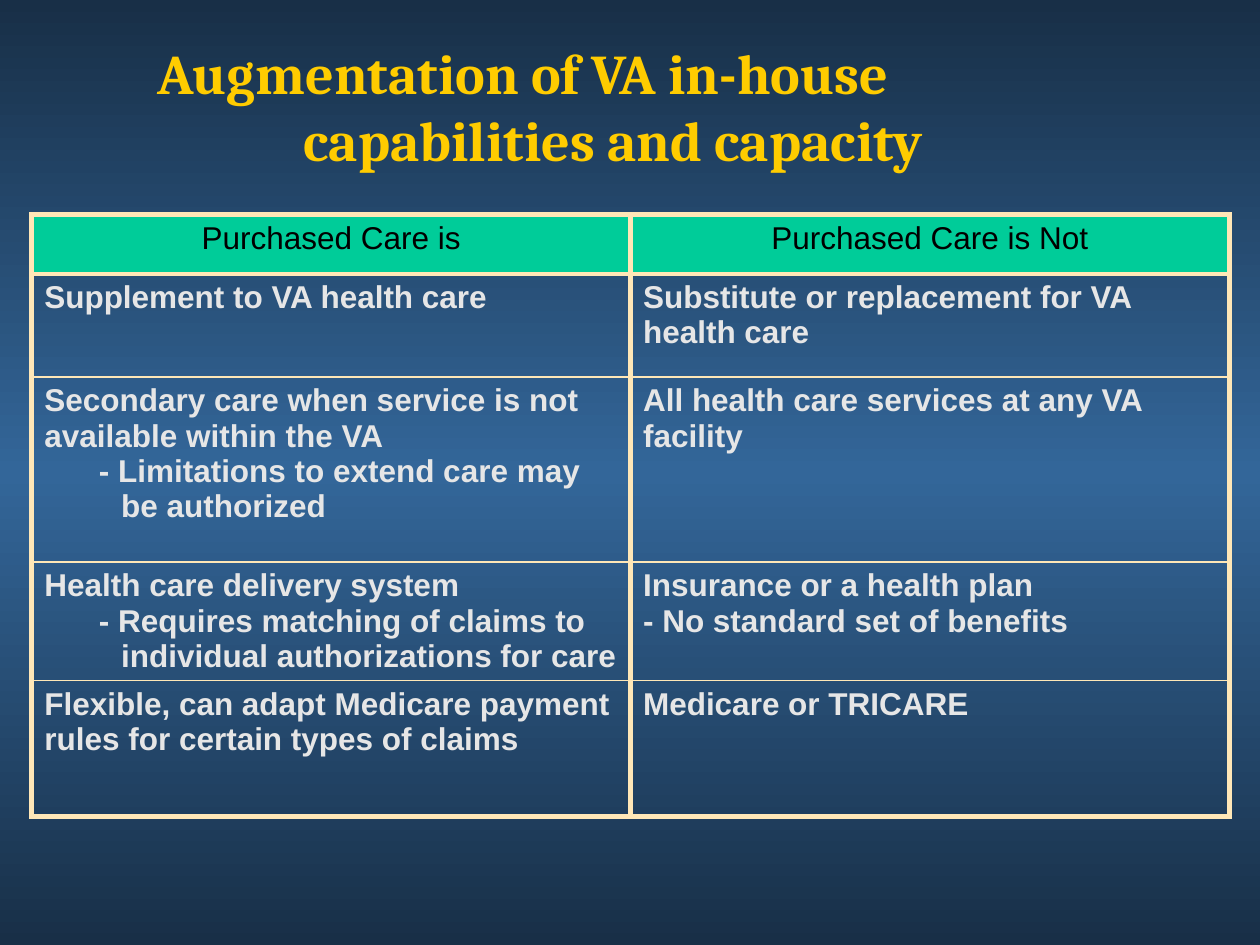
import copy

import pptx
import pptx.dml.color
import pptx.enum.text
import pptx.oxml
import pptx.oxml.ns
import pptx.util

Cm = pptx.util.Cm
Pt = pptx.util.Pt
ALIGN = pptx.enum.text.PP_ALIGN

TITLE = "Augmentation of VA in-house\vcapabilities and capacity"
HEADINGS = (["Purchased Care is"], ["Purchased Care is Not"])
ROWS = [
    HEADINGS,
    (["Supplement to VA health care"],
     ["Substitute or replacement for VA health care"]),
    (["Secondary care when service is not available within the VA",
      ("- Limitations to extend care may be authorized",)],
     ["All health care services at any VA facility"]),
    (["Health care delivery system",
      ("- Requires matching of claims to individual authorizations for care",)],
     ["Insurance or a health plan", "- No standard set of benefits"]),
    (["Flexible, can adapt Medicare payment rules for certain types of claims"],
     ["Medicare or TRICARE"]),
]
ROW_HEIGHTS = [1.19, 2.08, 3.73, 2.39, 2.74]
COLUMN_WIDTH = 12.07
THEME = {
    "background": [(0, "182F47"), (0.5, "336699"), (1, "182F47")],
    "title": "FFCC00", "title_font": "Cambria", "title_size": 32,
    "heading": "000000", "heading_fill": "00CC99",
    "body": "E6E6E6", "body_font": "Arial", "body_size": 18,
    "border": "FFE7B7", "thick": 3, "thin": 1,
}


def rgb(value):
    return pptx.dml.color.RGBColor.from_string(value)


def style(font, name, size, colour, bold):
    font.name, font.size, font.bold = name, Pt(size), bold
    font.color.rgb = rgb(colour)


def indent(para, margin, first_line):
    properties = para._p.get_or_add_pPr()
    properties.set("marL", str(Cm(margin)))
    properties.set("indent", str(Cm(first_line)))


def paint_background(slide):
    fill = slide.background.fill
    fill.gradient()
    fill.gradient_angle = 270
    stops = slide.element.find(".//" + pptx.oxml.ns.qn("a:gsLst"))
    stops.append(copy.deepcopy(stops[-1]))
    for stop, (position, colour) in zip(fill.gradient_stops, THEME["background"]):
        stop.position = position
        stop.color.rgb = rgb(colour)


def add_title(slide):
    box = slide.shapes.title
    box.left, box.top, box.width, box.height = Cm(0.64), Cm(0.64), Cm(23.5), Cm(2.97)
    frame = box.text_frame
    frame.text = TITLE
    frame.auto_size = pptx.enum.text.MSO_AUTO_SIZE.NONE
    frame.vertical_anchor = pptx.enum.text.MSO_ANCHOR.MIDDLE
    para = frame.paragraphs[0]
    para.alignment = ALIGN.LEFT
    indent(para, 5.23, -2.95)
    for span in para.runs:
        style(span.font, THEME["title_font"], THEME["title_size"], THEME["title"], True)


def set_borders(cell, top, bottom):
    widths = {"L": THEME["thick"], "R": THEME["thick"], "T": top, "B": bottom}
    properties = cell._tc.get_or_add_tcPr()
    for place, (side, width) in enumerate(widths.items()):
        properties.insert(place, pptx.oxml.parse_xml(
            f'<a:ln{side} {pptx.oxml.ns.nsdecls("a")} w="{Pt(width)}"><a:solidFill>'
            f'<a:srgbClr val="{THEME["border"]}"/></a:solidFill></a:ln{side}>'))


def fill_cell(cell, lines, is_heading):
    if is_heading:
        cell.fill.solid()
        cell.fill.fore_color.rgb = rgb(THEME["heading_fill"])
    else:
        cell.fill.background()
    for number, line in enumerate(lines):
        frame = cell.text_frame
        para = frame.add_paragraph() if number else frame.paragraphs[0]
        is_detail = isinstance(line, tuple)
        para.text = line[0] if is_detail else line
        para.alignment = ALIGN.CENTER if is_heading else ALIGN.LEFT
        if is_detail:
            para.level = 1
            indent(para, 1.55, -0.45)
        colour = THEME["heading" if is_heading else "body"]
        style(para.runs[0].font, THEME["body_font"], THEME["body_size"],
              colour, not is_heading)


def add_comparison(slide):
    table = slide.shapes.add_table(
        len(ROWS), len(HEADINGS), Cm(0.64), Cm(4.33),
        Cm(COLUMN_WIDTH * len(HEADINGS)), Cm(sum(ROW_HEIGHTS))).table
    table.first_row = table.horz_banding = False
    for column in table.columns:
        column.width = Cm(COLUMN_WIDTH)
    last = len(ROWS) - 1
    for number, (row, contents) in enumerate(zip(table.rows, ROWS)):
        row.height = Cm(ROW_HEIGHTS[number])
        top = THEME["thick" if number <= 1 else "thin"]
        bottom = THEME["thick" if number in (0, last) else "thin"]
        for cell, lines in zip(row.cells, contents):
            fill_cell(cell, lines, number == 0)
            set_borders(cell, top, bottom)


def main():
    deck = pptx.Presentation()
    deck.slide_width, deck.slide_height = Cm(25.4), Cm(19.05)
    slide = deck.slides.add_slide(deck.slide_layouts.get_by_name("Title Only"))
    paint_background(slide)
    add_title(slide)
    add_comparison(slide)
    deck.save("out.pptx")


if __name__ == "__main__":
    main()
